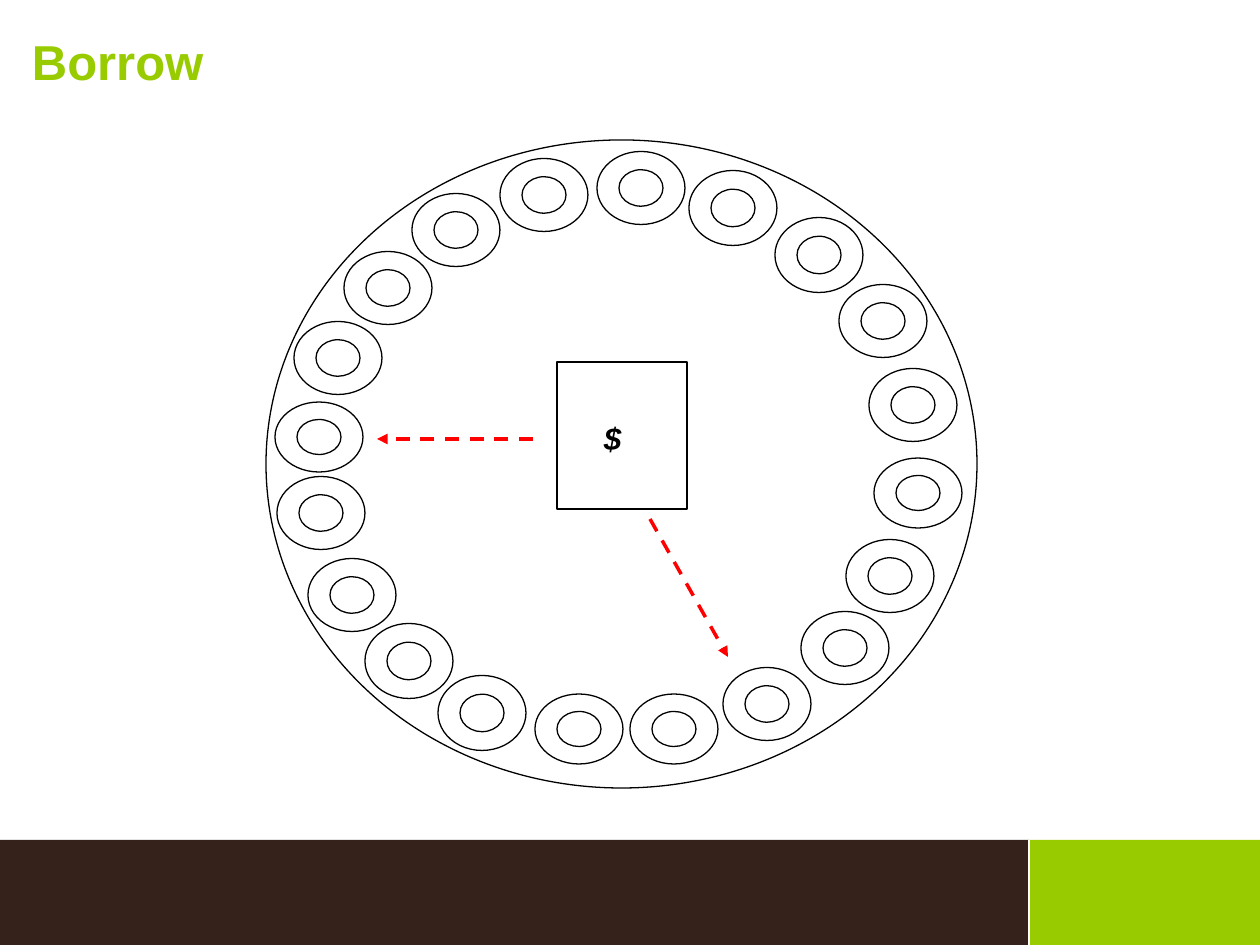
from lxml.etree import SubElement
from pptx import Presentation
from pptx.dml.color import RGBColor
from pptx.enum.dml import MSO_LINE
from pptx.enum.shapes import MSO_CONNECTOR, MSO_SHAPE
from pptx.enum.text import MSO_ANCHOR, PP_ALIGN
from pptx.oxml.ns import qn
from pptx.util import Pt

GREEN = RGBColor(0x99, 0xCC, 0x00)
BROWN = RGBColor(0x35, 0x23, 0x1B)
WHITE = RGBColor(0xFF, 0xFF, 0xFF)
BLACK = RGBColor(0x00, 0x00, 0x00)
RED = RGBColor(0xFF, 0x00, 0x00)

SIZE = (1260, 945)
BARS = [((1029, 840, 231, 105), GREEN), ((0, 840, 1029, 105), BROWN)]
SPLIT = (1029, 840, 1029, 945)
TABLE = (266, 140, 711, 648)
BANK = (557, 362, 130, 147)
SEAT = 88
SEATS = [
    (641, 188, 73), (733, 208, 75), (819, 255, 75), (883, 321, 73),
    (913, 405, 73), (918, 493, 70), (890, 576, 73), (845, 648, 73),
    (767, 704, 73), (674, 729, 70), (579, 729, 70), (482, 713, 75),
    (409, 661, 75), (352, 595, 73), (321, 513, 73), (319, 437, 70),
    (338, 358, 73), (388, 288, 73), (456, 230, 73), (544, 195, 73),
]
ARROWS = [(533, 439, 377, 439), (650, 519, 728, 657)]

TITLE = {
    "text": "Borrow",
    "box": (32, 32, 1134, 116),
    "pad": (0, 0, 0, 0),
    "align": PP_ALIGN.LEFT,
    "font": {"size": Pt(28), "bold": True, "name": "Arial"},
    "color": GREEN,
}
MONEY = {
    "text": "$",
    "box": (573, 413, 97, 52),
    "pad": (13, 6, 31, 6),
    "align": PP_ALIGN.CENTER,
    "font": {"size": Pt(18), "bold": True, "italic": True, "name": "Arial"},
    "color": BLACK,
}


def px(n):
    return round(n * 914400 / 126)


def assign(item, vals):
    for key, val in vals.items():
        setattr(item, key, val)


def draw(kind, box, fill, edge=None):
    shape = shapes.add_shape(kind, *map(px, box))
    shape.shadow.inherit = False
    shape.fill.solid()
    shape.fill.fore_color.rgb = fill
    if edge is None:
        shape.line.fill.background()
    else:
        shape.line.color.rgb = edge
        shape.line.width = Pt(0.75)


def seat(x, y, high):
    for part in (1, 0.5):
        w, h = SEAT * part, high * part
        draw(MSO_SHAPE.OVAL, (x - w / 2, y - h / 2, w, h), WHITE, BLACK)


def line(ends, color, width):
    link = shapes.add_connector(MSO_CONNECTOR.STRAIGHT, *map(px, ends))
    link.line.color.rgb = color
    link.line.width = Pt(width)
    SubElement(link._element.spPr, qn("a:effectLst"))
    return link


def arrow(ends):
    link = line(ends, RED, 2)
    link.line.dash_style = MSO_LINE.DASH
    edge = link._element.spPr.find(qn("a:ln"))
    SubElement(edge, qn("a:tailEnd"), type="triangle")


def label(data):
    frame = shapes.add_textbox(*map(px, data["box"])).text_frame
    sides = ("margin_left", "margin_top", "margin_right", "margin_bottom")
    assign(frame, dict(zip(sides, map(px, data["pad"]))))
    assign(frame, {"word_wrap": True, "vertical_anchor": MSO_ANCHOR.TOP})
    para = frame.paragraphs[0]
    para.alignment = data["align"]
    run = para.add_run()
    run.text = data["text"]
    assign(run.font, data["font"])
    run.font.color.rgb = data["color"]


deck = Presentation()
deck.slide_width, deck.slide_height = map(px, SIZE)
shapes = deck.slides.add_slide(deck.slide_layouts[6]).shapes

for box, fill in BARS:
    draw(MSO_SHAPE.RECTANGLE, box, fill)
line(SPLIT, WHITE, 1.5)
draw(MSO_SHAPE.OVAL, TABLE, WHITE, BLACK)
for spot in SEATS:
    seat(*spot)
draw(MSO_SHAPE.RECTANGLE, BANK, WHITE, BLACK)
label(MONEY)
for ends in ARROWS:
    arrow(ends)
label(TITLE)

deck.save("out.pptx")
